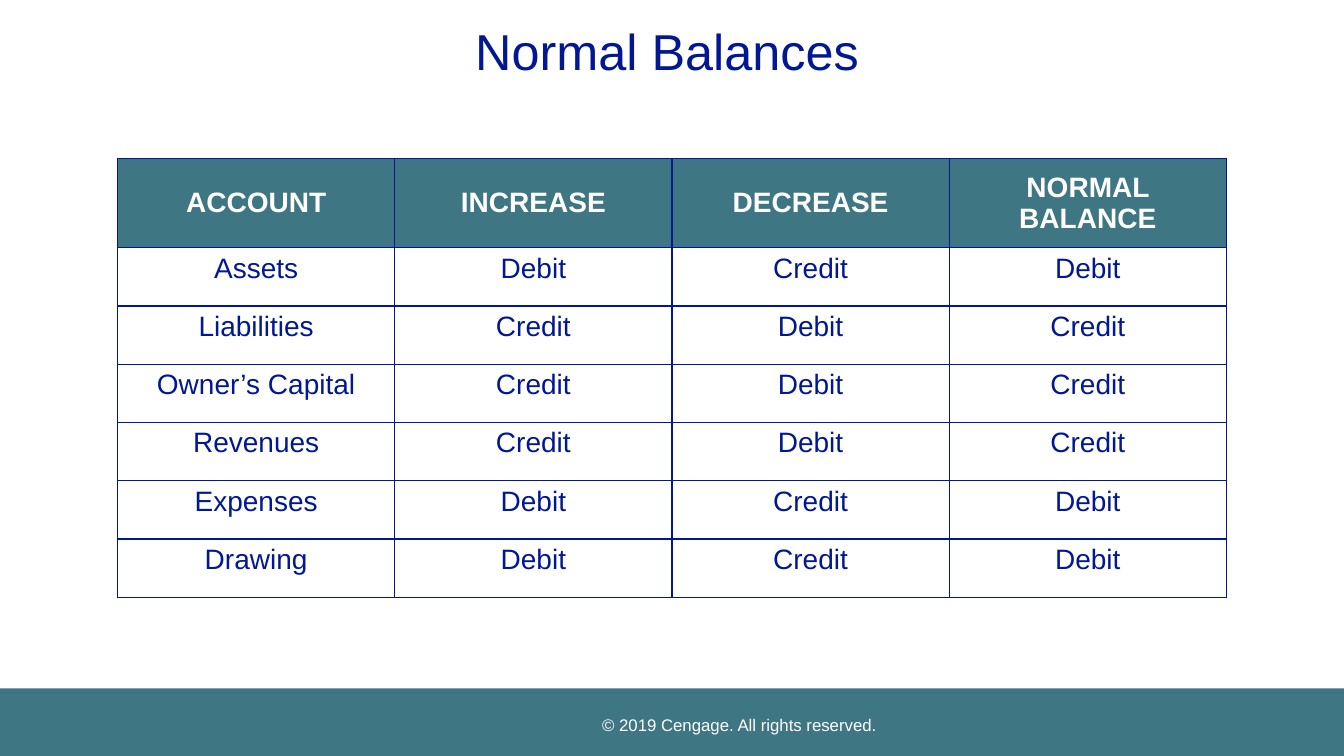
from lxml import etree
from pptx import Presentation
from pptx.dml.color import RGBColor
from pptx.enum import shapes, text
from pptx.oxml import ns
from pptx.util import Pt

NAVY, TEAL, WHITE = "011892", "3E7684", "FFFFFF"
HEAD = ["ACCOUNT", "INCREASE", "DECREASE", "NORMAL BALANCE"]
DEBIT = ["Assets", "Expenses", "Drawing"]
NAMES = ["Assets", "Liabilities", "Owner’s Capital", "Revenues", "Expenses", "Drawing"]


def paint(item, color):
    item.fill.solid()
    item.fill.fore_color.rgb = RGBColor.from_string(color)


def write(frame, words, size, color, bold=False):
    para = frame.paragraphs[0]
    para.alignment = text.PP_ALIGN.CENTER
    run = para.add_run()
    run.text = words
    font = run.font
    font.name, font.size, font.bold = "Arial", Pt(size), bold
    font.color.rgb = RGBColor.from_string(color)
    return para


def inset(frame, anchor):
    frame.word_wrap = True
    frame.margin_left = frame.margin_right = 0
    frame.margin_top = frame.margin_bottom = 0
    frame.vertical_anchor = anchor


def border(cell, color, width):
    props = cell._tc.get_or_add_tcPr()
    for spot, side in enumerate(["lnL", "lnR", "lnT", "lnB"]):
        line = etree.Element(ns.qn("a:" + side), w=str(Pt(width)))
        fill = etree.SubElement(line, ns.qn("a:solidFill"))
        etree.SubElement(fill, ns.qn("a:srgbClr"), val=color)
        props.insert(spot, line)


def bar(slide, x, y, w, h):
    box = slide.shapes.add_shape(shapes.MSO_SHAPE.RECTANGLE, Pt(x), Pt(y), Pt(w), Pt(h))
    box.shadow.inherit = False
    paint(box, TEAL)
    box.line.fill.background()
    return box


def footer(slide, x, y, w, h):
    bar(slide, x, y, w, h)
    note = bar(slide, x + 160.5, y + 12.25, 736.5, 27.5)
    inset(note.text_frame, text.MSO_ANCHOR.MIDDLE)
    write(note.text_frame, "© 2019 Cengage. All rights reserved.", 12, WHITE)


def title(slide, x, y, w, h):
    box = slide.shapes.add_textbox(Pt(x), Pt(y), Pt(w), Pt(h))
    inset(box.text_frame, text.MSO_ANCHOR.TOP)
    write(box.text_frame, "Normal Balances", 36, NAVY).line_spacing = 0.9


def grid(slide, x, y, w, h, top):
    rows = [HEAD]
    for name in NAMES:
        up, down = ("Debit", "Credit") if name in DEBIT else ("Credit", "Debit")
        rows.append([name, up, down, up])
    frame = slide.shapes.add_table(len(rows), len(HEAD), Pt(x), Pt(y), Pt(w), Pt(h))
    table = frame.table
    for col in table.columns:
        col.width = Pt(w / len(HEAD))
    for r, words in enumerate(rows):
        head = r == 0
        table.rows[r].height = Pt(top if head else (h - top) / len(NAMES))
        for c, word in enumerate(words):
            cell = table.cell(r, c)
            if head:
                paint(cell, TEAL)
                cell.vertical_anchor = text.MSO_ANCHOR.MIDDLE
            else:
                cell.fill.background()
            border(cell, NAVY, 1)
            write(cell.text_frame, word, 20, WHITE if head else NAVY, head)


def main():
    deck = Presentation()
    deck.slide_width, deck.slide_height = Pt(960), Pt(540)
    slide = deck.slides.add_slide(deck.slide_layouts[6])
    paint(slide.background, WHITE)
    footer(slide, -0.5, 491.75, 960.5, 48.75)
    title(slide, 160.5, 19.5, 632, 79)
    grid(slide, 84, 113, 792, 313.75, 64)
    deck.save("out.pptx")


if __name__ == "__main__":
    main()
